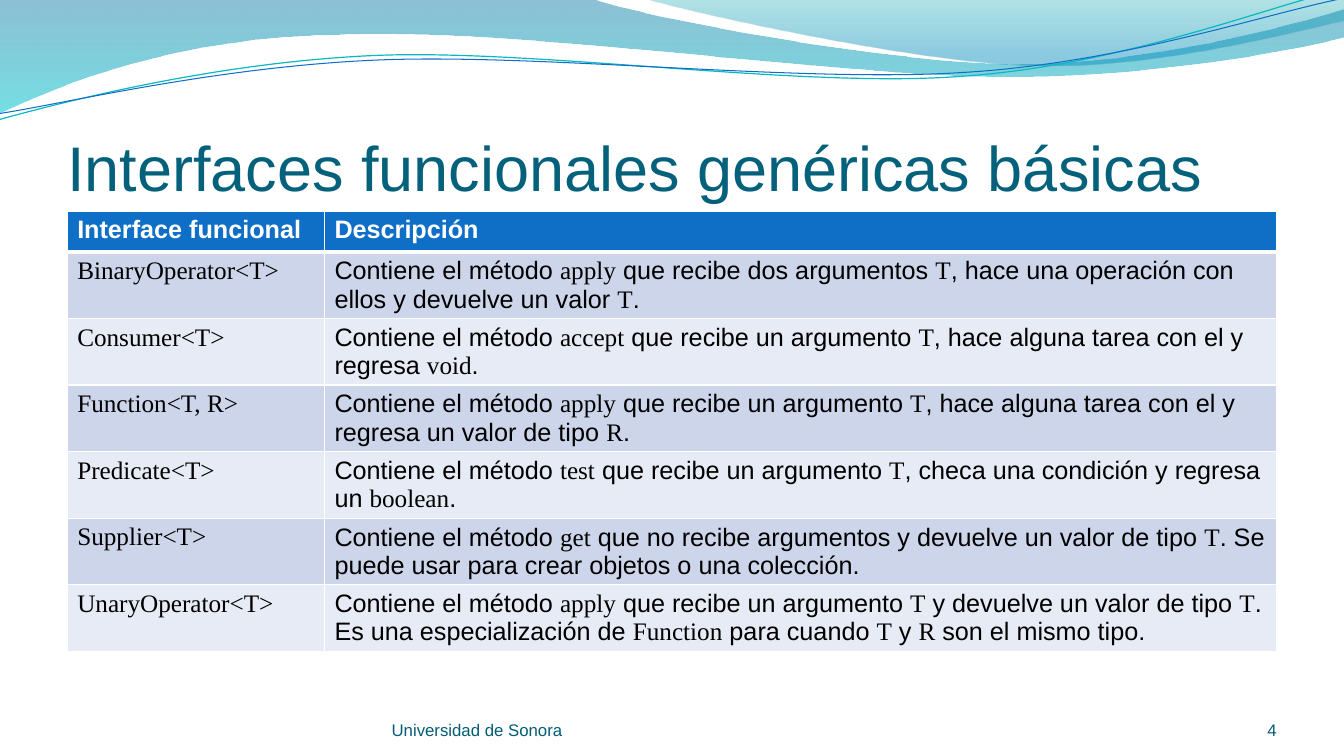
from itertools import cycle
from math import cos, radians, sin
from lxml.etree import Element, SubElement
from pptx import Presentation
from pptx.dml.color import RGBColor
from pptx.enum.text import MSO_ANCHOR, MSO_AUTO_SIZE, PP_ALIGN
from pptx.oxml import parse_xml
from pptx.oxml.ns import nsdecls, qn
from pptx.util import Pt

PX = 9525
TILT = 2.7
HUB = (639, 56)
SANS = "Arial"
SERIF = "Times New Roman"

WHITE = RGBColor(0xFF, 0xFF, 0xFF)
BLACK = RGBColor(0x00, 0x00, 0x00)
TITLE = RGBColor(0x04, 0x61, 0x7B)
FOOT = RGBColor(0x04, 0x5D, 0x75)
BLUE = RGBColor(0x0F, 0x6F, 0xC6)
TEAL = RGBColor(0x0A, 0xB8, 0xBF)
DARK = RGBColor(0xCC, 0xD5, 0xEA)
LIGHT = RGBColor(0xE7, 0xEB, 0xF5)
DEEP = RGBColor(0x00, 0x74, 0xA1)
CYAN = RGBColor(0x00, 0xC6, 0xCF)
GREEN = RGBColor(0x00, 0xA1, 0xA9)
SKY = RGBColor(0x00, 0x8B, 0xBF)

BANDS = [
    ([(0, 0), (564, -1),
      (609, 16, 850, 61, 971, 61), (1092, 61, 1227, 25, 1280, 9),
      (1282, 35),
      (1259, 42, 1114, 73, 954, 73), (796, 72, 489, 27, 329, 33),
      (165, 35, 59, 80, -1, 108)],
     [(0, DEEP, 45), (1, CYAN, 55)]),
    ([(613, -1),
      (652, 11, 873, 60, 984, 62), (1095, 66, 1231, 31, 1280, 20),
      (1280, 0)],
     [(0, GREEN, 30), (0.8, SKY, 45)]),
]
WAVES = [
    ([(-1, 114), (61, 97, 203, 60, 354, 53),
      (506, 46, 758, 84, 912, 73), (1066, 63, 1202, 8, 1278, -10)],
     TEAL, 0.85),
    ([(0, 108), (60, 99, 209, 63, 363, 57),
      (516, 51, 764, 79, 917, 69), (1070, 60, 1205, 13, 1281, -2)],
     BLUE, 0.75),
]
HEADS = ["Interface funcional", "Descripción"]
ROWS = [
    ("BinaryOperator<T>",
     "Contiene el método `apply` que recibe dos argumentos `T`, "
     "hace una operación con ellos y devuelve un valor `T`."),
    ("Consumer<T>",
     "Contiene el método `accept` que recibe un argumento `T`, "
     "hace alguna tarea con el y regresa `void`."),
    ("Function<T, R>",
     "Contiene el método `apply` que recibe un argumento `T`, "
     "hace alguna tarea con el y regresa un valor de tipo `R`."),
    ("Predicate<T>",
     "Contiene el método `test` que recibe un argumento `T`, "
     "checa una condición y regresa un `boolean`."),
    ("Supplier<T>",
     "Contiene el método `get` que no recibe argumentos y devuelve un valor "
     "de tipo `T`. Se puede usar para crear objetos o una colección."),
    ("UnaryOperator<T>",
     "Contiene el método `apply` que recibe un argumento `T` y devuelve un "
     "valor de tipo `T`. Es una especialización de `Function` para cuando "
     "`T` y `R` son el mismo tipo."),
]


def turn(spot, angle):
    x, y = (n - mid for n, mid in zip(spot, HUB))
    c, s = cos(radians(angle)), sin(radians(angle))
    return (HUB[0] + x * c - y * s) * PX, (HUB[1] + x * s + y * c) * PX


def bend(shape, nodes):
    lines = iter(list(shape.element.iter(qn("a:lnTo"))))
    for node in nodes[1:]:
        group = [next(lines) for pair in range(len(node) // 2)]
        if len(group) == 3:
            curve = Element(qn("a:cubicBezTo"))
            group[0].addprevious(curve)
            for line in group:
                curve.append(line[0])
                line.getparent().remove(line)


def add_path(shapes, nodes, close, angle=0):
    spots = [turn(node[n:n + 2], angle)
             for node in nodes for n in range(0, len(node), 2)]
    pen = shapes.build_freeform(*spots[0])
    pen.add_line_segments(spots[1:], close=close)
    shape = pen.convert_to_shape()
    bend(shape, nodes)
    shape.rotation = -angle
    shape.shadow.inherit = False
    return shape


def add_band(shapes, nodes, stops):
    shape = add_path(shapes, nodes, True)
    shape.line.fill.background()
    shape.fill.gradient()
    shape.fill.gradient_angle = 270
    for stop, (place, color, alpha) in zip(shape.fill.gradient_stops, stops):
        stop.position = place
        stop.color.rgb = color
    tints = shape.element.spPr.iter(qn("a:srgbClr"))
    for tint, (place, color, alpha) in zip(tints, stops):
        SubElement(tint, qn("a:alpha"), val=str(alpha * 1000))


def add_wave(shapes, nodes, color, width):
    shape = add_path(shapes, nodes, False, TILT)
    shape.fill.background()
    shape.line.color.rgb = color
    shape.line.width = Pt(width)


def add_run(para, text, size, color, font=SANS, bold=False):
    run = para.add_run()
    run.text = text
    run.font.name = font
    run.font.size = Pt(size)
    run.font.bold = bold
    run.font.color.rgb = color


def set_frame(shape, box, top=0):
    shape.left, shape.top, shape.width, shape.height = (n * PX for n in box)
    frame = shape.text_frame
    frame.word_wrap = True
    frame.auto_size = MSO_AUTO_SIZE.NONE
    frame.vertical_anchor = MSO_ANCHOR.BOTTOM
    frame.margin_left = frame.margin_right = frame.margin_bottom = 0
    frame.margin_top = top * PX
    return frame.paragraphs[0]


def add_title(slide, text):
    para = set_frame(slide.shapes.title, (64, 74, 1152, 120), 5)
    para.alignment = PP_ALIGN.LEFT
    add_run(para, text, 45, TITLE)


def add_foot(slide, text, box, align):
    para = set_frame(slide.shapes.add_textbox(0, 0, 0, 0), box)
    para.alignment = align
    add_run(para, text, 12, FOOT)


def set_edges(cell, row):
    props = cell._tc.get_or_add_tcPr()
    widths = {"L": 1, "R": 1, "T": 3 if row == 1 else 1, "B": 1 if row else 3}
    for spot, (side, width) in enumerate(widths.items()):
        props.insert(spot, parse_xml(
            f'<a:ln{side} {nsdecls("a")} w="{Pt(width)}"><a:solidFill>'
            f'<a:srgbClr val="{WHITE}"/></a:solidFill></a:ln{side}>'))


def set_cell(cell, row, fill):
    cell.fill.solid()
    cell.fill.fore_color.rgb = fill
    set_edges(cell, row)
    return cell.text_frame.paragraphs[0]


def add_grid(slide):
    count = len(ROWS) + 1
    grid = slide.shapes.add_table(
        count, 2, 64 * PX, 201 * PX, 1152 * PX, 39 * count * PX).table
    for col, width in zip(grid.columns, (245, 907)):
        col.width = width * PX
    for col, text in enumerate(HEADS):
        para = set_cell(grid.cell(0, col), 0, BLUE)
        add_run(para, text, 18, WHITE, bold=True)
    for row, ((name, note), fill) in enumerate(zip(ROWS, cycle((DARK, LIGHT))), 1):
        add_run(set_cell(grid.cell(row, 0), row, fill), name, 18, BLACK, SERIF)
        para = set_cell(grid.cell(row, 1), row, fill)
        for part, font in zip(note.split("`"), cycle((SANS, SERIF))):
            add_run(para, part, 18, BLACK, font)


def main():
    deck = Presentation()
    deck.slide_width = 1280 * PX
    deck.slide_height = 720 * PX
    slide = deck.slides.add_slide(deck.slide_layouts[5])
    for nodes, stops in BANDS:
        add_band(slide.shapes, nodes, stops)
    group = slide.shapes.add_group_shape()
    for nodes, color, width in WAVES:
        add_wave(group.shapes, nodes, color, width)
    add_title(slide, "Interfaces funcionales genéricas básicas")
    add_grid(slide)
    add_foot(slide, "Universidad de Sonora", (373, 667, 469, 38), PP_ALIGN.LEFT)
    add_foot(slide, "4", (1109, 667, 107, 38), PP_ALIGN.RIGHT)
    deck.save("out.pptx")


if __name__ == "__main__":
    main()
